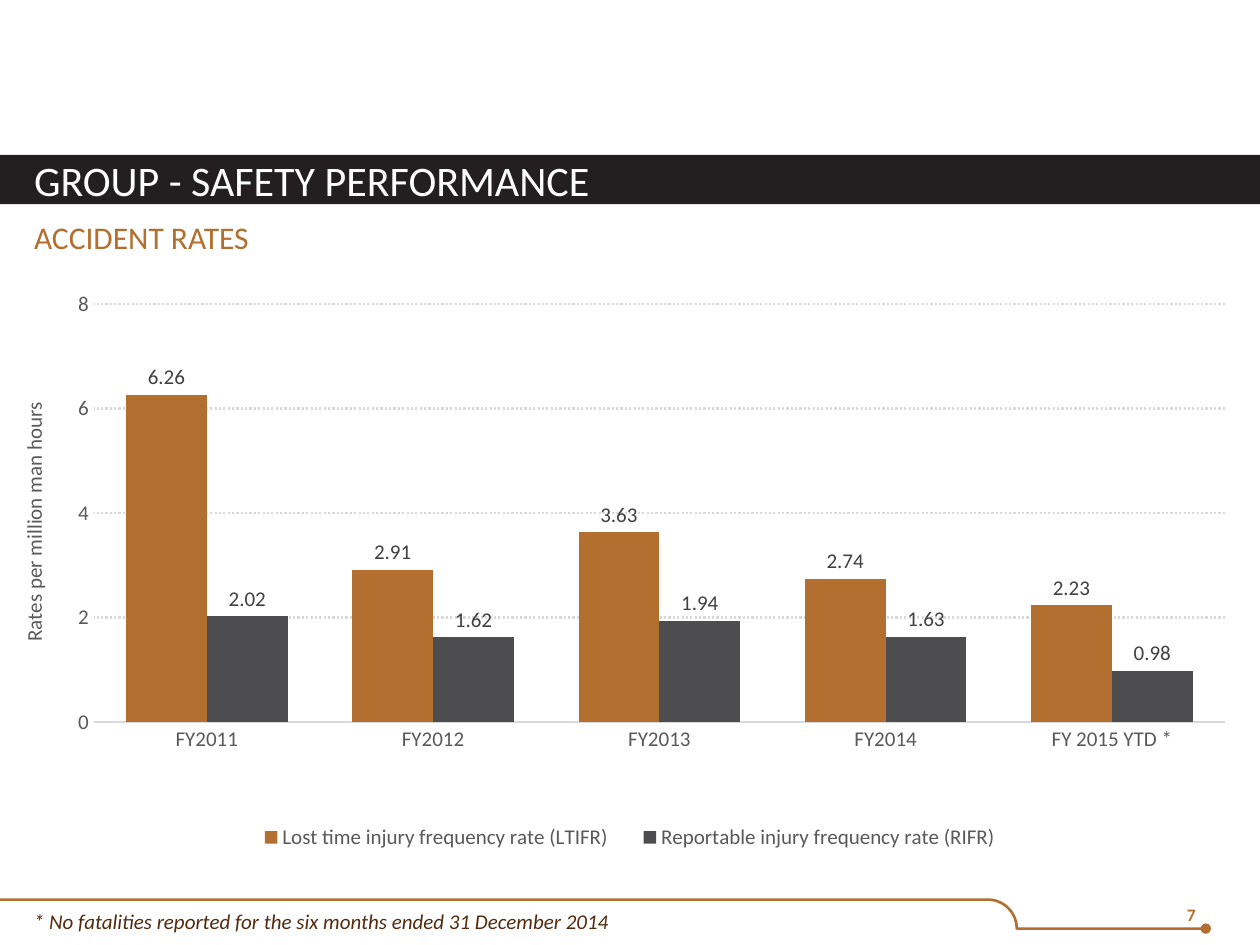
import math

import lxml.etree
import pptx
import pptx.chart.data
import pptx.dml.color
import pptx.enum.chart
import pptx.enum.dml
import pptx.enum.shapes
import pptx.enum.text
import pptx.oxml
import pptx.oxml.ns
import pptx.util

COPPER, BLACK, WHITE = "B26F2F", "231F20", "FFFFFF"
CHARCOAL, GREY, LABEL, RULE, BROWN = "4D4D4F", "595959", "404040", "D9D9D9", "542A0E"
COLUMNS, ROWS = 100, 75
ALIGN = pptx.enum.text.PP_ALIGN
ANCHOR = pptx.enum.text.MSO_ANCHOR


def rgb(value):
    """Turn a hex string into a colour."""
    return pptx.dml.color.RGBColor.from_string(value)


def set_font(font, size=12, color=GREY, bold=False, italic=False):
    """Format a font in the slide's typeface."""
    font.name = "Calibri"
    font.size = pptx.util.Pt(size)
    font.color.rgb = rgb(color)
    font.bold = bold
    font.italic = italic


def write(tf, text, align=ALIGN.LEFT, anchor=ANCHOR.MIDDLE, bottom=0, spacing=None, **font):
    """Put one formatted paragraph into a text frame."""
    tf.margin_left = tf.margin_top = tf.margin_right = 0
    tf.margin_bottom = pptx.util.Inches(bottom)
    tf.word_wrap = True
    tf.auto_size = pptx.enum.text.MSO_AUTO_SIZE.NONE
    tf.vertical_anchor = anchor
    p = tf.paragraphs[0]
    p.alignment = align
    p.line_spacing = spacing
    p.space_before = pptx.util.Pt(0)
    r = p.add_run()
    r.text = text
    set_font(r.font, **font)
    return p


def set_layout(parent, index, x, y, w, h, inner=False):
    """Fix the place of a chart part as shares of the chart."""
    qn = pptx.oxml.ns.qn
    for old in parent.findall(qn("c:layout")):
        parent.remove(old)
    layout = lxml.etree.Element(qn("c:layout"))
    manual = lxml.etree.SubElement(layout, qn("c:manualLayout"))
    values = {"layoutTarget": "inner"} if inner else {}
    values.update(xMode="edge", yMode="edge", x=x, y=y, w=w, h=h)
    for name, value in values.items():
        lxml.etree.SubElement(manual, qn(f"c:{name}"), val=str(value))
    parent.insert(index, layout)


class Deck:
    """Hold the presentation, its grid and the current slide."""

    def __init__(self):
        """Start a presentation with one slide."""
        self.prs = pptx.Presentation()
        self.prs.slide_width = pptx.util.Inches(10)
        self.prs.slide_height = pptx.util.Inches(7.5)
        self.s = self.prs.slides.add_slide(self.prs.slide_layouts[1])

    def place(self, *cells):
        """Turn column and row pairs into lengths."""
        units = (self.prs.slide_width / COLUMNS, self.prs.slide_height / ROWS)
        return [pptx.util.Emu(round(c * units[i % 2])) for i, c in enumerate(cells)]

    def placeholder(self, index, cells, text, **style):
        """Move and fill a template placeholder."""
        sp = self.s.placeholders[index]
        sp.left, sp.top, sp.width, sp.height = self.place(*cells)
        return write(sp.text_frame, text, **style)

    def title(self, cells, text, **style):
        """Fill the title."""
        self.placeholder(0, cells, text, **style)

    def subtitle(self, cells, text, **style):
        """Fill the body placeholder with an unbulleted line."""
        p = self.placeholder(1, cells, text, anchor=ANCHOR.TOP, **style)
        pPr = p._p.get_or_add_pPr()
        pPr.set("marL", "0")
        pPr.set("indent", "0")
        lxml.etree.SubElement(pPr, pptx.oxml.ns.qn("a:buNone"))

    def text(self, cells, text, **style):
        """Add a text box."""
        sp = self.s.shapes.add_textbox(*self.place(*cells))
        write(sp.text_frame, text, **style)

    def band(self, cells, color):
        """Add a plain band behind everything else."""
        sp = self.s.shapes.add_shape(
            pptx.enum.shapes.MSO_SHAPE.RECTANGLE, *self.place(*cells))
        sp.shadow.inherit = False
        sp.fill.solid()
        sp.fill.fore_color.rgb = rgb(color)
        sp.line.fill.background()
        self.s.shapes._spTree.insert(2, sp._element)

    def footer_rule(self, top, bottom, bend, end, color):
        """Draw the footer rule with a rounded step and a dot at its end."""
        radius = bottom - top
        turns = [math.radians(a) for a in range(0, 91, 5)]
        arc = [(bend + radius * math.sin(t), bottom - radius * math.cos(t)) for t in turns]
        points = [self.place(*p) for p in arc + [(end, bottom)]]
        builder = self.s.shapes.build_freeform(*self.place(0, top))
        builder.add_line_segments(points, close=False)
        sp = builder.convert_to_shape()
        sp.shadow.inherit = False
        sp.fill.background()
        sp.line.color.rgb = rgb(color)
        sp.line.width = pptx.util.Pt(1.5)
        lxml.etree.SubElement(sp.line._get_or_add_ln(), pptx.oxml.ns.qn("a:tailEnd"), type="oval")

    def column_chart(self, cells, categories, series, axis_title):
        """Add a clustered column chart of (name, values, colour) series."""
        data = pptx.chart.data.CategoryChartData()
        data.categories = categories
        for name, values, _ in series:
            data.add_series(name, values)
        kind = pptx.enum.chart.XL_CHART_TYPE.COLUMN_CLUSTERED
        chart = self.s.shapes.add_chart(kind, *self.place(*cells), data).chart
        set_font(chart.font, size=10, color="000000")
        chart.has_title = False
        self.axes(chart, axis_title)
        plot = chart.plots[0]
        plot.gap_width, plot.overlap, plot.vary_by_categories = 80, 0, False
        for ser, (_, _, color) in zip(plot.series, series):
            ser.format.fill.solid()
            ser.format.fill.fore_color.rgb = rgb(color)
            labels = ser.data_labels
            labels.show_value = True
            labels.position = pptx.enum.chart.XL_LABEL_POSITION.OUTSIDE_END
            labels.number_format, labels.number_format_is_linked = "#,##0.00", False
            set_font(labels.font, color=LABEL)
        chart.has_legend = True
        chart.legend.position = pptx.enum.chart.XL_LEGEND_POSITION.BOTTOM
        chart.legend.include_in_layout = False
        set_font(chart.legend.font)
        set_layout(chart.legend._element, 1, 0.18, 0.87, 0.64, 0.07)
        set_layout(chart._chartSpace.chart.plotArea, 0, 0.064, 0.091, 0.92, 0.638, inner=True)

    def axes(self, chart, title):
        """Style both chart axes."""
        cat, val = chart.category_axis, chart.value_axis
        for axis in (cat, val):
            axis.major_tick_mark = axis.minor_tick_mark = pptx.enum.chart.XL_TICK_MARK.NONE
            set_font(axis.tick_labels.font)
        cat.format.line.color.rgb = rgb(RULE)
        cat.format.line.width = pptx.util.Pt(0.75)
        val.format.line.fill.background()
        val.minimum_scale, val.maximum_scale, val.major_unit = 0, 8, 2
        val.tick_labels.number_format = "#,##0"
        val.tick_labels.number_format_is_linked = False
        grid = val.major_gridlines.format.line
        grid.color.rgb = rgb(RULE)
        grid.width = pptx.util.Pt(1.25)
        grid.dash_style = pptx.enum.dml.MSO_LINE.ROUND_DOT
        val.has_title = True
        r = val.axis_title.text_frame.paragraphs[0].add_run()
        r.text = title
        set_font(r.font)


def main():
    """Build and save the slide."""
    deck = Deck()
    deck.band((0, 12.3, COLUMNS, 3.9), BLACK)
    deck.footer_rule(71.4, 73.7, 78.4, 95.7, COPPER)
    deck.title((2.7, 11.5, 79.5, 5.5), "GROUP - SAFETY PERFORMANCE", size=24, color=WHITE)
    deck.subtitle((2.7, 17, 94.5, 3.9), "ACCIDENT RATES", size=18, color=COPPER, spacing=1.1)
    deck.column_chart(
        (1.2, 19.4, 97.6, 52),
        ["FY2011", "FY2012", "FY2013", "FY2014", "FY 2015 YTD *"],
        [("Lost time injury frequency rate (LTIFR)", (6.26, 2.91, 3.63, 2.74, 2.23), COPPER),
         ("Reportable injury frequency rate (RIFR)", (2.02, 1.62, 1.94, 1.63, 0.98), CHARCOAL)],
        "Rates per million man hours")
    deck.text((2.7, 70.6, 75.6, 3.9),
              "* No fatalities reported for the six months ended 31 December 2014",
              anchor=ANCHOR.BOTTOM, bottom=0.04, color=BROWN, italic=True)
    deck.text((90.2, 71.4, 4.7, 2.4), "7", align=ALIGN.RIGHT, size=10, color=COPPER, bold=True)
    deck.prs.save("out.pptx")


if __name__ == "__main__":
    main()
